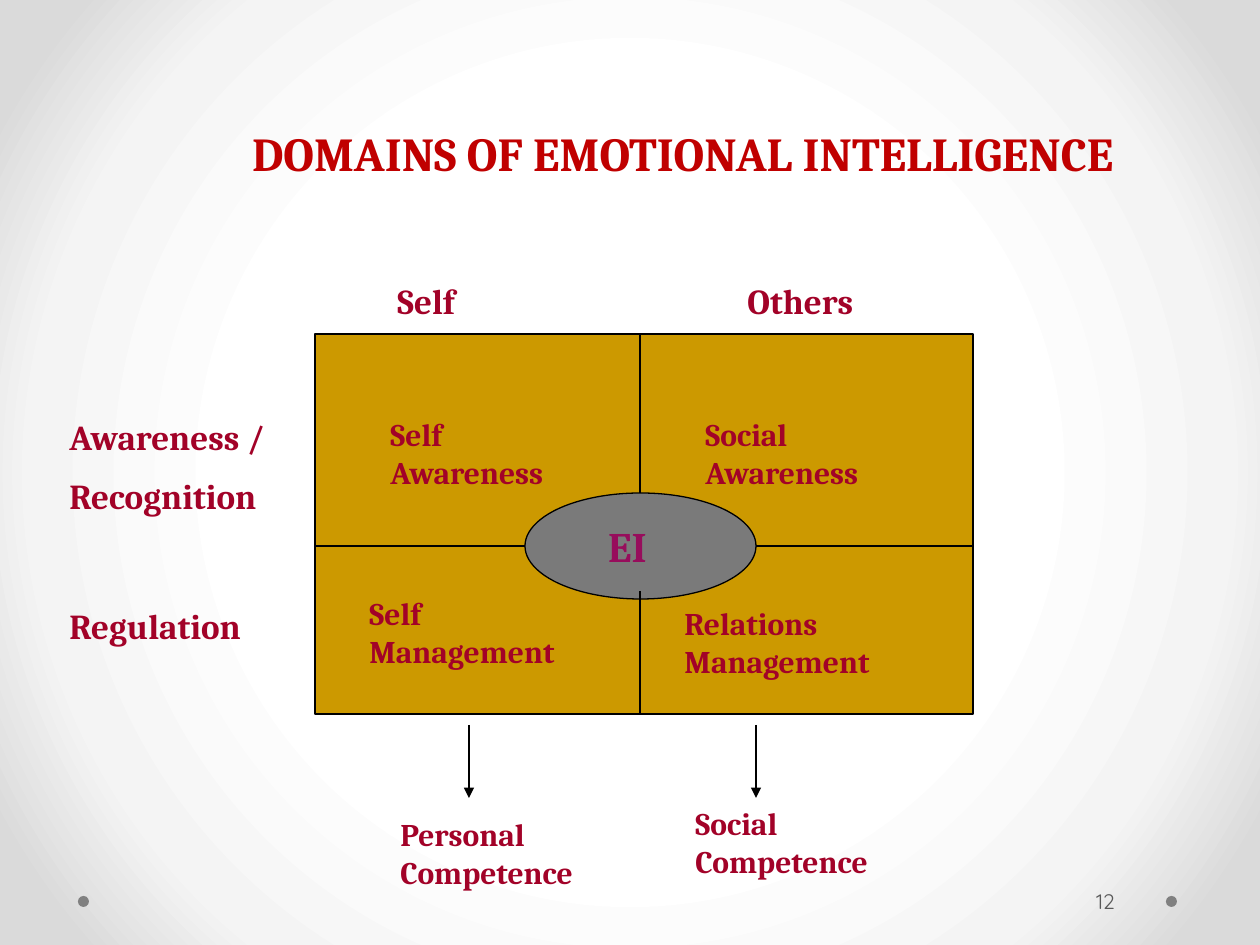
from dataclasses import dataclass

from lxml.etree import SubElement
from pptx import Presentation
from pptx.dml.color import RGBColor
from pptx.enum.shapes import MSO_CONNECTOR, MSO_SHAPE
from pptx.enum.text import MSO_ANCHOR, MSO_AUTO_SIZE, PP_ALIGN
from pptx.oxml import parse_xml
from pptx.oxml.ns import nsdecls, qn
from pptx.util import Emu, Pt

PIXELS_PER_INCH = 126
COLORS = {
    "title": "C00000",
    "label": "A20228",
    "center_text": "970D5C",
    "matrix": "CC9900",
    "oval": "7A7A7A",
    "dot": "808080",
    "number": "595959",
    "line": "000000",
}
BACKGROUND_STOPS = {50: "FFFFFF", 76: "F4F4F4", 92: "DADADA"}


@dataclass
class Box:
    left: int
    top: int
    width: int
    height: int


@dataclass
class Label:
    text: str
    box: Box
    size: int = 18


@dataclass
class Line:
    start: tuple[int, int]
    end: tuple[int, int]
    arrow: bool = False


MATRIX = Box(315, 334, 658, 380)
OVAL = Box(525, 493, 231, 106)
RIGHT, BOTTOM = MATRIX.left + MATRIX.width, MATRIX.top + MATRIX.height
MIDDLE_X, MIDDLE_Y = 640, 546
ARROW_TOP, ARROW_BOTTOM = 725, 798

LINES = [
    Line((MIDDLE_X, MATRIX.top), (MIDDLE_X, OVAL.top)),
    Line((MIDDLE_X, 591), (MIDDLE_X, BOTTOM)),
    Line((OVAL.left + OVAL.width, MIDDLE_Y), (RIGHT, MIDDLE_Y)),
    Line((OVAL.left, MIDDLE_Y), (MATRIX.left, MIDDLE_Y)),
    Line((756, ARROW_TOP), (756, ARROW_BOTTOM), arrow=True),
    Line((469, ARROW_TOP), (469, ARROW_BOTTOM), arrow=True),
]
LABELS = [
    Label("Self Awareness", Box(378, 409, 189, 88)),
    Label("Social Awareness", Box(693, 409, 189, 88)),
    Label("Self Management", Box(357, 588, 242, 88)),
    Label("Relations Management", Box(672, 598, 231, 88)),
    Label("Social Competence", Box(683, 798, 210, 88)),
    Label("Personal Competence", Box(388, 809, 210, 88)),
    Label("Regulation", Box(57, 598, 234, 55), 20),
    Label("Awareness /\nRecognition", Box(57, 409, 234, 118), 20),
    Label("Self", Box(385, 273, 168, 55), 20),
    Label("Others", Box(735, 273, 168, 55), 20),
]


def px(value: int) -> Emu:
    return Emu(round(value * 914400 / PIXELS_PER_INCH))


def place(box: Box) -> tuple[Emu, ...]:
    return px(box.left), px(box.top), px(box.width), px(box.height)


def rgb(name: str) -> RGBColor:
    return RGBColor.from_string(COLORS[name])


def set_text(frame, text: str, size: int, color: str,
             font: str = "Cambria", bold: bool = True) -> None:
    frame.text = text
    for para in frame.paragraphs:
        for span in para.runs:
            span.font.size = Pt(size)
            span.font.name = font
            span.font.bold = bold
            span.font.color.rgb = rgb(color)


def set_background(slide) -> None:
    stops = "".join(
        f'<a:gs pos="{position * 1000}"><a:srgbClr val="{color}"/></a:gs>'
        for position, color in BACKGROUND_STOPS.items()
    )
    background = parse_xml(
        f'<p:bg {nsdecls("p", "a")}><p:bgPr><a:gradFill rotWithShape="1">'
        f'<a:gsLst>{stops}</a:gsLst><a:path path="circle">'
        '<a:fillToRect l="50000" t="50000" r="50000" b="50000"/></a:path>'
        '</a:gradFill><a:effectLst/></p:bgPr></p:bg>'
    )
    slide.element.cSld.insert(0, background)


def add_filled_shape(slide, kind: MSO_SHAPE, box: Box, fill: str, outlined: bool = True):
    shape = slide.shapes.add_shape(kind, *place(box))
    shape.shadow.inherit = False
    shape.fill.solid()
    shape.fill.fore_color.rgb = rgb(fill)
    if outlined:
        shape.line.color.rgb = rgb("line")
        shape.line.width = Pt(0.75)
    else:
        shape.line.fill.background()
    return shape


def add_line(slide, line: Line) -> None:
    connector = slide.shapes.add_connector(
        MSO_CONNECTOR.STRAIGHT, *map(px, line.start + line.end))
    connector.line.color.rgb = rgb("line")
    connector.line.width = Pt(0.75)
    if line.arrow:
        SubElement(connector.line._get_or_add_ln(), qn("a:tailEnd"), type="triangle")
    SubElement(connector._element.spPr, qn("a:effectLst"))


def add_label(slide, label: Label) -> None:
    frame = slide.shapes.add_textbox(*place(label.box)).text_frame
    frame.word_wrap = True
    set_text(frame, label.text, label.size, "label")
    for para in frame.paragraphs[1:]:
        para.space_before = Pt(label.size / 2)


def format_title(slide) -> None:
    title = slide.shapes.title
    title.left, title.top, title.width, title.height = place(Box(147, 73, 1071, 158))
    frame = title.text_frame
    set_text(frame, "DOMAINS OF EMOTIONAL INTELLIGENCE", 27, "title")
    frame.auto_size = MSO_AUTO_SIZE.NONE
    frame.vertical_anchor = MSO_ANCHOR.TOP
    frame.paragraphs[0].alignment = PP_ALIGN.CENTER
    frame.paragraphs[0].line_spacing = Pt(58)


def add_page_number(slide) -> None:
    frame = slide.shapes.add_textbox(*place(Box(1092, 876, 105, 50))).text_frame
    frame.word_wrap = True
    frame.vertical_anchor = MSO_ANCHOR.MIDDLE
    frame.margin_left = px(4)
    set_text(frame, "12", 12, "number", font="Quicksand", bold=False)


def add_center_oval(slide) -> None:
    frame = add_filled_shape(slide, MSO_SHAPE.OVAL, OVAL, "oval").text_frame
    frame.word_wrap = False
    frame.vertical_anchor = MSO_ANCHOR.MIDDLE
    frame.margin_left, frame.margin_right = px(12), px(38)
    set_text(frame, "EI", 24, "center_text")
    frame.paragraphs[0].alignment = PP_ALIGN.CENTER


def main() -> None:
    deck = Presentation()
    deck.slide_width, deck.slide_height = px(1260), px(945)
    page = deck.slides.add_slide(deck.slide_layouts[5])
    set_background(page)
    for left in (1166, 78):
        add_filled_shape(page, MSO_SHAPE.OVAL, Box(left, 896, 11, 11), "dot", outlined=False)
    format_title(page)
    add_page_number(page)
    add_filled_shape(page, MSO_SHAPE.RECTANGLE, MATRIX, "matrix")
    add_center_oval(page)
    for line in LINES:
        add_line(page, line)
    for label in LABELS:
        add_label(page, label)
    deck.save("out.pptx")


if __name__ == "__main__":
    main()
